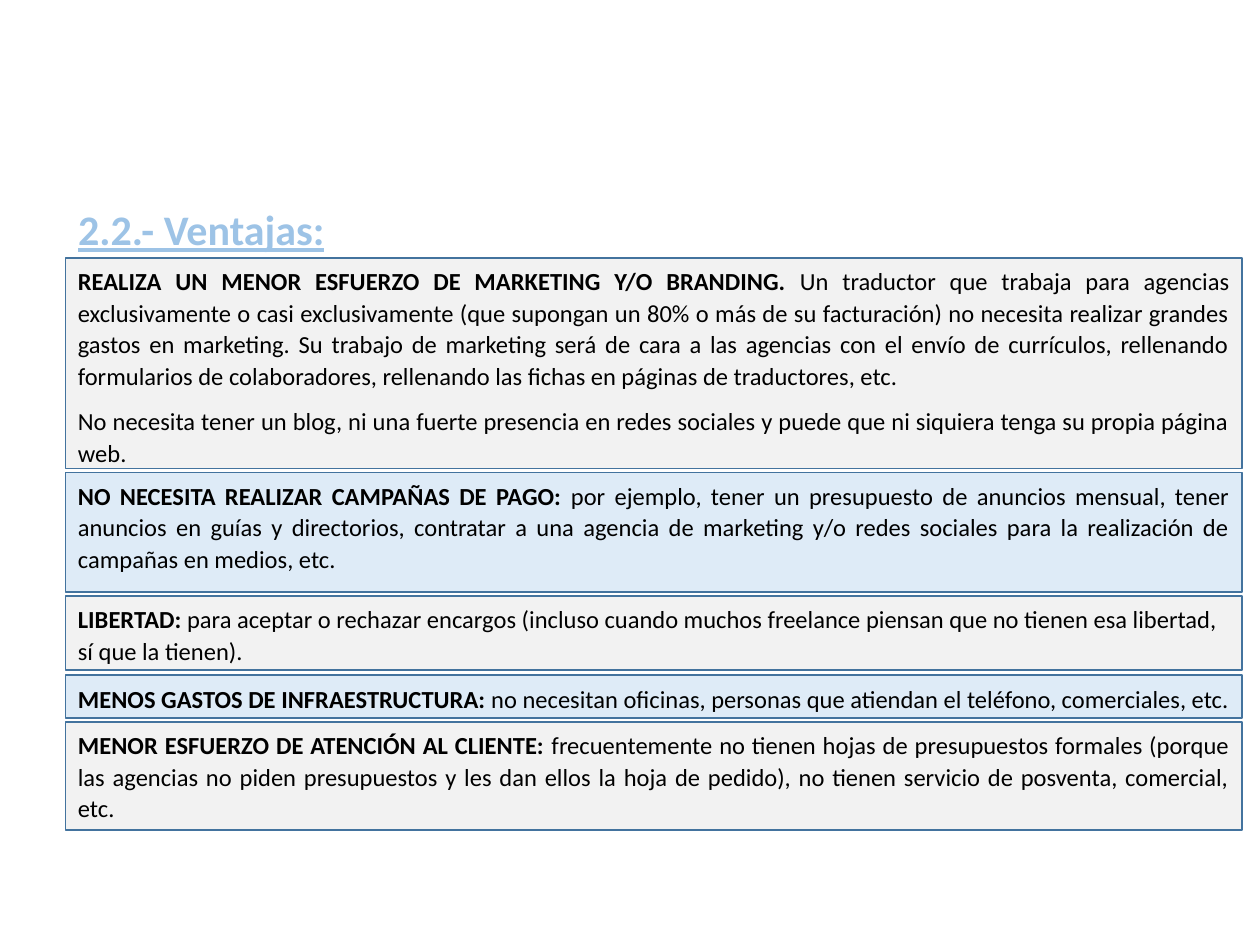
from dataclasses import dataclass

from pptx import Presentation
from pptx.dml.color import RGBColor
from pptx.enum import shapes, text
from pptx.util import Inches, Pt

COLORS = {
    "heading": "9DC3E6",
    "text": "000000",
    "border": "43739E",
    "gray": "F2F2F2",
    "blue": "DEEBF7",
}
FONT = "Calibri"
LEFT, WIDTH = 0.52, 9.34


@dataclass
class Advantage:
    top: float
    height: float
    lead: str
    detail: str
    extra: str = ""
    justified: bool = True


ADVANTAGES = [
    Advantage(
        2.05, 1.67, "REALIZA UN MENOR ESFUERZO DE MARKETING Y/O BRANDING.",
        " Un traductor que trabaja para agencias exclusivamente o casi exclusivamente "
        "(que supongan un 80% o más de su facturación) no necesita realizar grandes "
        "gastos en marketing. Su trabajo de marketing será de cara a las agencias con "
        "el envío de currículos, rellenando formularios de colaboradores, rellenando "
        "las fichas en páginas de traductores, etc.",
        extra="No necesita tener un blog, ni una fuerte presencia en redes sociales y "
        "puede que ni siquiera tenga su propia página web.",
    ),
    Advantage(
        3.75, 0.95, "NO NECESITA REALIZAR CAMPAÑAS DE PAGO:",
        " por ejemplo, tener un presupuesto de anuncios mensual, tener anuncios en "
        "guías y directorios, contratar a una agencia de marketing y/o redes sociales "
        "para la realización de campañas en medios, etc.",
    ),
    Advantage(
        4.73, 0.59, "LIBERTAD:",
        " para aceptar o rechazar encargos (incluso cuando muchos freelance piensan "
        "que no tienen esa libertad, sí que la tienen).",
        justified=False,
    ),
    Advantage(
        5.36, 0.34, "MENOS GASTOS DE INFRAESTRUCTURA:",
        " no necesitan oficinas, personas que atiendan el teléfono, comerciales, etc.",
        justified=False,
    ),
    Advantage(
        5.73, 0.86, "MENOR ESFUERZO DE ATENCIÓN AL CLIENTE:",
        " frecuentemente no tienen hojas de presupuestos formales (porque las agencias "
        "no piden presupuestos y les dan ellos la hoja de pedido), no tienen servicio "
        "de posventa, comercial, etc.",
    ),
]


def rgb(name: str) -> RGBColor:
    return RGBColor.from_string(COLORS[name])


def format_font(font, size: float, color: str, bold: bool) -> None:
    font.name, font.size, font.bold = FONT, Pt(size), bold
    font.color.rgb = rgb(color)


def format_paragraph(paragraph, justified: bool) -> None:
    paragraph.alignment = text.PP_ALIGN.JUSTIFY if justified else text.PP_ALIGN.LEFT
    paragraph.line_spacing = 1.07
    paragraph.space_before, paragraph.space_after = Pt(0), Pt(8)


def place_heading(heading) -> None:
    heading.left, heading.top = Inches(LEFT), Inches(1.54)
    heading.width, heading.height = Inches(2.19), Inches(0.51)
    frame = heading.text_frame
    frame.text = "2.2.- Ventajas:"
    frame.auto_size = text.MSO_AUTO_SIZE.NONE
    frame.vertical_anchor = text.MSO_ANCHOR.TOP
    format_paragraph(frame.paragraphs[0], justified=False)
    font = frame.paragraphs[0].runs[0].font
    format_font(font, 24, "heading", bold=True)
    font.underline = True


def add_advantage(slide, advantage: Advantage, fill: str) -> None:
    panel = slide.shapes.add_shape(
        shapes.MSO_SHAPE.RECTANGLE, Inches(LEFT), Inches(advantage.top),
        Inches(WIDTH), Inches(advantage.height),
    )
    panel.shadow.inherit = False
    panel.fill.solid()
    panel.fill.fore_color.rgb = rgb(fill)
    panel.line.color.rgb = rgb("border")
    panel.line.width = Pt(1)

    frame = panel.text_frame
    frame.word_wrap = True
    frame.vertical_anchor = text.MSO_ANCHOR.TOP
    frame.margin_bottom = 0
    first = frame.paragraphs[0]
    for words in (advantage.lead, advantage.detail):
        first.add_run().text = words
    if advantage.extra:
        frame.add_paragraph().text = advantage.extra
    for paragraph in frame.paragraphs:
        format_paragraph(paragraph, advantage.justified)
        for run in paragraph.runs:
            format_font(run.font, 14, "text", bold=run.text == advantage.lead)


def main() -> None:
    deck = Presentation()
    deck.slide_width, deck.slide_height = Inches(10), Inches(7.5)
    title_only = deck.slide_layouts[5]
    slide = deck.slides.add_slide(title_only)
    place_heading(slide.shapes.title)
    for index, advantage in enumerate(ADVANTAGES):
        add_advantage(slide, advantage, "blue" if index % 2 else "gray")
    deck.save("out.pptx")


if __name__ == "__main__":
    main()
